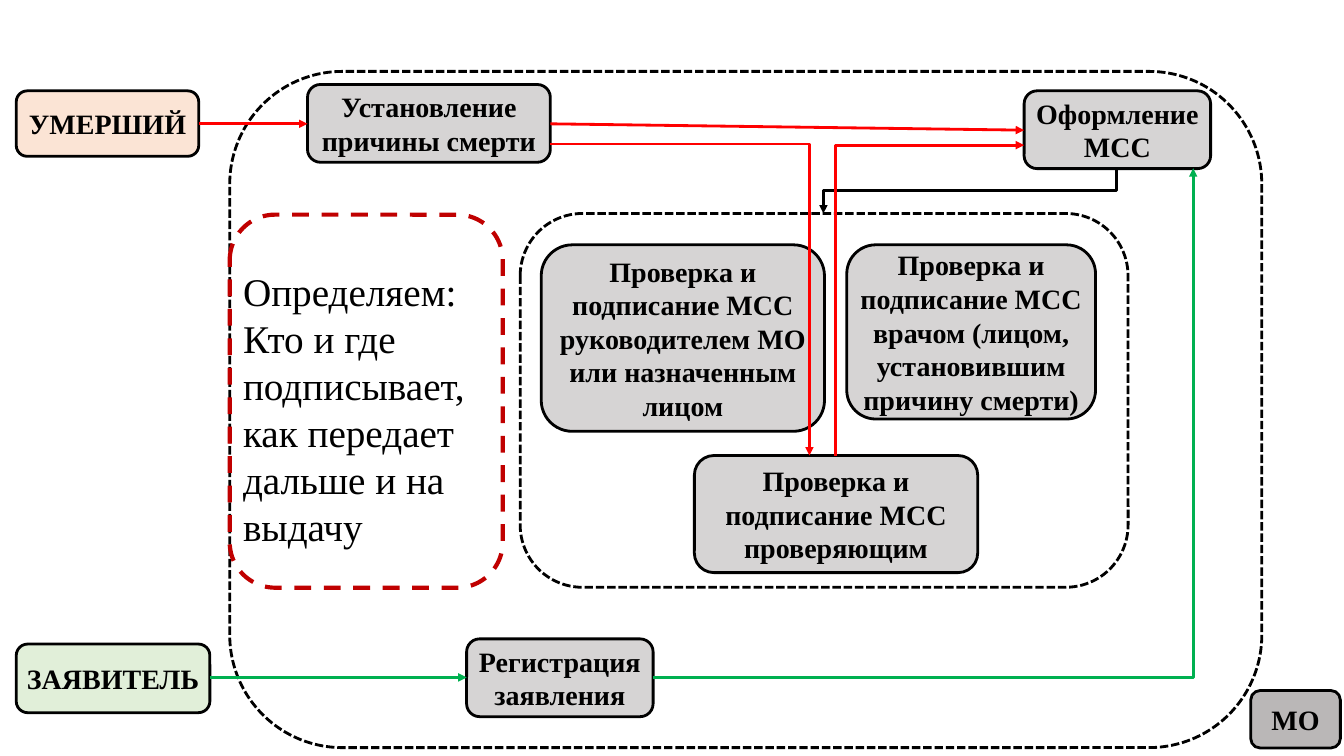
from lxml import etree
from pptx import Presentation
from pptx.dml.color import RGBColor
from pptx.enum.dml import MSO_LINE
from pptx.enum.shapes import MSO_CONNECTOR, MSO_SHAPE
from pptx.enum.text import MSO_ANCHOR, PP_ALIGN
from pptx.oxml.ns import qn
from pptx.util import Cm, Pt

ROUNDED = MSO_SHAPE.ROUNDED_RECTANGLE
STRAIGHT, ELBOW = MSO_CONNECTOR.STRAIGHT, MSO_CONNECTOR.ELBOW
DASH, SHORT_DASH = MSO_LINE.DASH, MSO_LINE.SQUARE_DOT
CENTER, LEFT = PP_ALIGN.CENTER, PP_ALIGN.LEFT
MIDDLE = MSO_ANCHOR.MIDDLE
FONT = "Times New Roman"
COLORS = {
    "black": "000000", "red": "FF0000", "dark_red": "C00000",
    "green": "00B050", "peach": "F8CBAD", "light_green": "C5E0B4",
    "gray": "AFABAB", "dark_gray": "767171",
}
BOXES = [
    ("УМЕРШИЙ", 0.41, 2.29, 4.6, 1.65, "peach"),
    ("ЗАЯВИТЕЛЬ", 0.41, 16.23, 4.88, 1.73, "light_green"),
    ("Регистрация заявления", 11.76, 16.1, 4.7, 1.96, "gray"),
    ("Установление причины смерти", 7.75, 2.13, 6.12, 1.96, "gray"),
    ("Оформление МСС", 25.81, 2.29, 4.7, 1.96, "gray"),
    ("Проверка и подписание МСС врачом (лицом, установившим причину смерти)",
     21.34, 6.17, 6.27, 4.39, "gray"),
    ("Проверка и подписание МСС руководителем МО или назначенным лицом",
     13.64, 6.17, 7.14, 4.7, "gray"),
    ("Проверка и подписание МСС проверяющим", 17.5, 11.48, 7.14, 2.95, "gray"),
    ("МО", 31.52, 17.4, 2.26, 1.45, "dark_gray"),
]
NOTE = ["Определяем:", "Кто и где подписывает, как передает дальше и на выдачу"]
STRAIGHT_ARROWS = [
    (5.28, 17.07, 11.76, 17.07, "green"),
    (5.01, 3.12, 7.75, 3.12, "red"),
    (13.87, 3.12, 25.81, 3.28, "red"),
]
VERTICAL_ELBOWS = [
    (28.14, 4.24, 20.75, 5.38, "black", 0.5),
    (13.87, 3.63, 20.4, 11.48, "red", 0),
    (21.06, 11.48, 25.81, 3.66, "red", 1),
]


def rgb(name):
    """Return the palette colour of this name."""
    return RGBColor.from_string(COLORS[name])


def add_frame(s, x, y, w, h, color="black", width=2, dash=None):
    """Add an unfilled rounded rectangle."""
    sp = s.shapes.add_shape(ROUNDED, Cm(x), Cm(y), Cm(w), Cm(h))
    sp.shadow.inherit = False
    sp.fill.background()
    sp.line.color.rgb = rgb(color)
    sp.line.width = Pt(width)
    if dash is not None:
        sp.line.dash_style = dash
    return sp


def add_text(sp, lines, size, bold, align, top=0):
    """Write paragraphs into a shape, centred vertically."""
    tf = sp.text_frame
    tf.word_wrap = True
    tf.vertical_anchor = MIDDLE
    tf.margin_left = tf.margin_right = tf.margin_bottom = 0
    tf.margin_top = Cm(top)
    for i, line in enumerate(lines):
        p = tf.add_paragraph() if i else tf.paragraphs[0]
        p.alignment = align
        r = p.add_run()
        r.text = line
        r.font.name = FONT
        r.font.size = Pt(size)
        r.font.bold = bold
        r.font.color.rgb = rgb("black")


def add_box(s, text, x, y, w, h, fill):
    """Add a labelled step with a half-transparent fill."""
    sp = add_frame(s, x, y, w, h)
    sp.fill.solid()
    sp.fill.fore_color.rgb = rgb(fill)
    clr = sp.fill._xPr.find(".//" + qn("a:srgbClr"))
    etree.SubElement(clr, qn("a:alpha"), val="50000")
    add_text(sp, [text], 20, True, CENTER)


def add_arrow(s, kind, x1, y1, x2, y2, color):
    """Add a connector with an arrowhead at its end."""
    cn = s.shapes.add_connector(kind, Cm(x1), Cm(y1), Cm(x2), Cm(y2))
    cn.line.color.rgb = rgb(color)
    cn.line.width = Pt(2)
    etree.SubElement(cn.line._get_or_add_ln(), qn("a:tailEnd"), type="triangle")
    etree.SubElement(cn._element.spPr, qn("a:effectLst"))
    return cn


def set_bend(cn, share):
    """Place the middle segment of an elbow at a share of its length."""
    av = cn._element.spPr.find(qn("a:prstGeom")).get_or_add_avLst()
    etree.SubElement(av, qn("a:gd"), name="adj1", fmla=f"val {round(share * 100000)}")


def add_vertical_elbow(s, x1, y1, x2, y2, color, share):
    """Add an elbow that leaves and arrives vertically."""
    cx, cy = (x1 + x2) / 2, (y1 + y2) / 2
    dx, dy = (x2 - x1) / 2, (y2 - y1) / 2
    cn = add_arrow(s, ELBOW, cx - dy, cy + dx, cx + dy, cy - dx, color)
    cn._element.spPr.find(qn("a:xfrm")).set("rot", "5400000")
    set_bend(cn, share)


def main():
    """Build the slide."""
    prs = Presentation()
    prs.slide_width, prs.slide_height = Cm(33.87), Cm(19.05)
    s = prs.slides.add_slide(prs.slide_layouts[6])
    add_frame(s, 5.79, 1.8, 26.01, 17.04, dash=SHORT_DASH)
    add_frame(s, 13.11, 5.38, 15.32, 9.42, dash=SHORT_DASH)
    for box in BOXES:
        add_box(s, *box)
    for arrow in STRAIGHT_ARROWS:
        add_arrow(s, STRAIGHT, *arrow)
    set_bend(add_arrow(s, ELBOW, 16.46, 17.07, 30.07, 4.24, "green"), 1)
    note = add_frame(s, 5.79, 5.41, 6.88, 9.4, "dark_red", 3, DASH)
    add_text(note, NOTE, 28, False, LEFT, top=0.35)
    for elbow in VERTICAL_ELBOWS:
        add_vertical_elbow(s, *elbow)
    prs.save("out.pptx")


if __name__ == "__main__":
    main()
